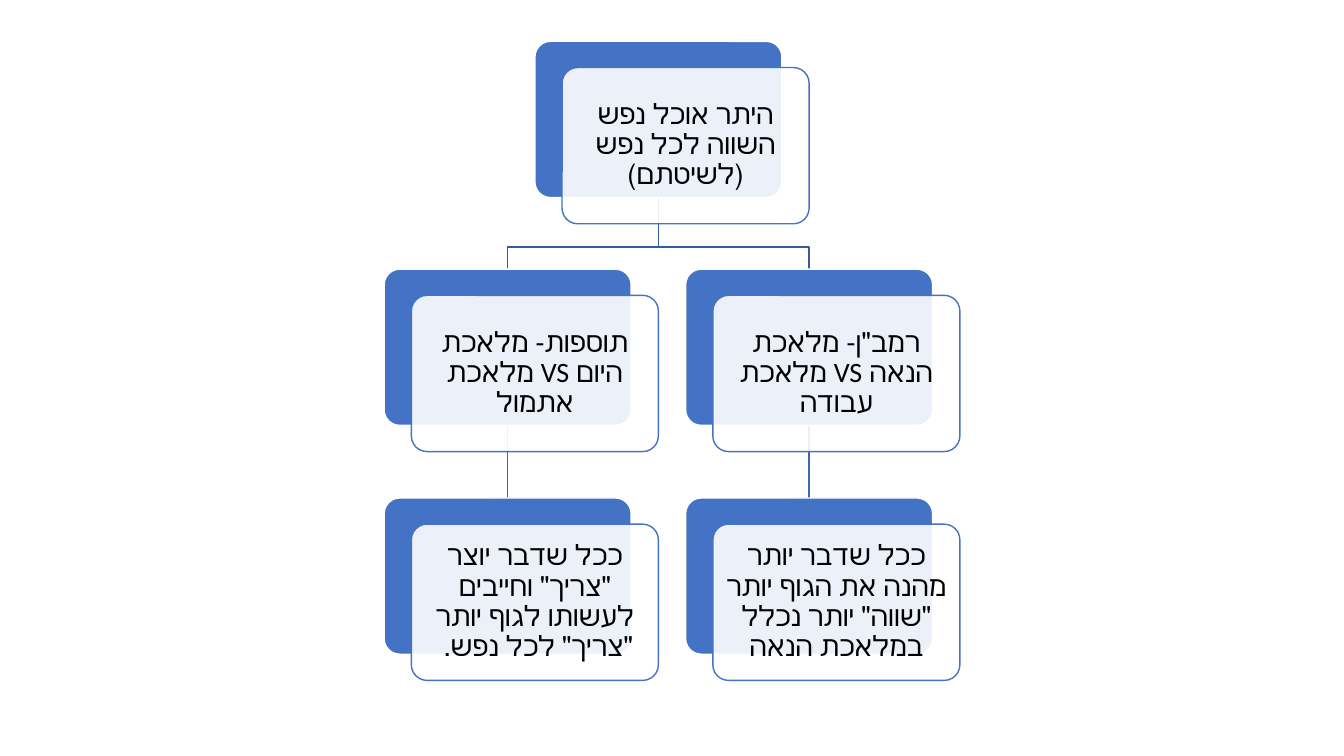
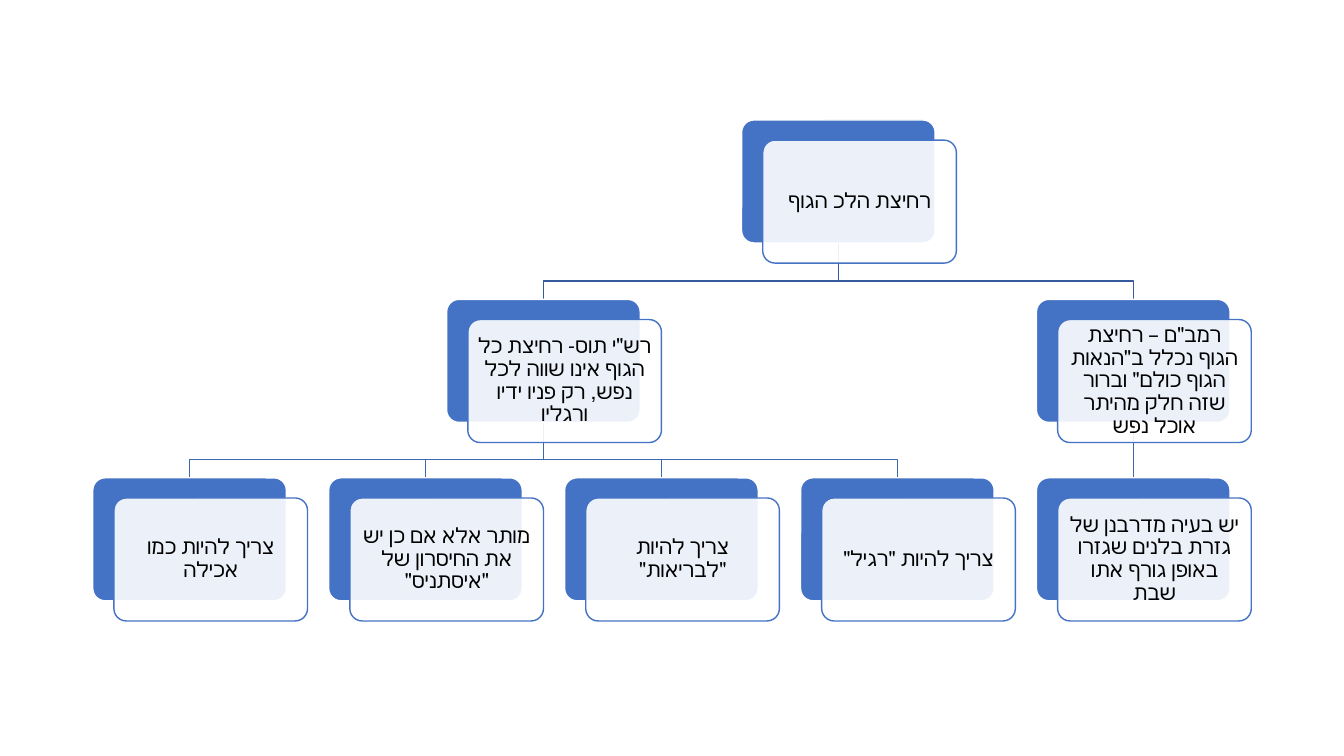
from dataclasses import dataclass

from lxml import etree
from pptx import Presentation
from pptx.dml.color import RGBColor
from pptx.enum.lang import MSO_LANGUAGE_ID
from pptx.enum.shapes import MSO_CONNECTOR, MSO_SHAPE
from pptx.enum.text import MSO_ANCHOR, PP_ALIGN
from pptx.oxml.ns import qn
from pptx.util import Inches, Pt

ROUNDED = MSO_SHAPE.ROUNDED_RECTANGLE
STRAIGHT = MSO_CONNECTOR.STRAIGHT
MIDDLE = MSO_ANCHOR.MIDDLE
CENTER = PP_ALIGN.CENTER
HEBREW = MSO_LANGUAGE_ID.HEBREW


@dataclass(frozen=True)
class Theme:
    font: str = "Calibri"
    blue: RGBColor = RGBColor(0x44, 0x72, 0xC4)
    white: RGBColor = RGBColor(0xFF, 0xFF, 0xFF)
    black: RGBColor = RGBColor(0, 0, 0)
    # Branch colour by the level of the parent
    branches: tuple = (RGBColor(0x36, 0x5B, 0x9D), RGBColor(0x3E, 0x67, 0xB2))
    line: Pt = Pt(1)
    corner: float = 0.1
    card_opacity: int = 90


THEME = Theme()

# Each tree has its measures in inches and its topics as
# (column, level, index of parent, text); columns may be fractional.
TREES = [
    dict(
        left=3.81, column_step=2.99, level_tops=(0.41, 2.67, 4.94),
        width=2.45, height=1.55, shift=(0.27, 0.26), drop=0.22,
        inset=0.08, size=Pt(20),
        topics=[
            (0.5, 0, None, 'היתר אוכל נפש השווה לכל נפש (לשיטתם)'),
            (1, 1, 0, 'רמב"ן- מלאכת הנאה VS מלאכת עבודה'),
            (1, 2, 1, 'ככל שדבר יותר מהנה את הגוף יותר "שווה" יותר נכלל במלאכת הנאה'),
            (0, 1, 0, 'תוספות- מלאכת היום VS מלאכת אתמול'),
            (0, 2, 3, 'ככל שדבר יוצר "צריך" וחייבים לעשותו לגוף יותר "צריך" לכל נפש. '),
        ],
    ),
    dict(
        left=0.92, column_step=2.34, level_tops=(1.19, 2.97, 4.74),
        width=1.92, height=1.22, shift=(0.21, 0.2), drop=0.18,
        inset=0.06, size=Pt(15),
        topics=[
            (2.75, 0, None, 'רחיצת הלכ הגוף'),
            (4, 1, 0, 'רמב"ם – רחיצת הגוף נכלל ב"הנאות הגוף כולם" וברור שזה חלק מהיתר אוכל נפש'),
            (4, 2, 1, 'יש בעיה מדרבנן של גזרת בלנים שגזרו באופן גורף אתו שבת'),
            (1.5, 1, 0, 'רש"י תוס- רחיצת כל הגוף אינו שווה לכל נפש, רק פניו ידיו ורגליו'),
            (3, 2, 3, 'צריך להיות ״רגיל״'),
            (2, 2, 3, 'צריך להיות ״לבריאות״'),
            (1, 2, 3, 'מותר אלא אם כן יש את החיסרון של ״איסתניס״'),
            (0, 2, 3, 'צריך להיות כמו אכילה'),
        ],
    ),
]


def add_panel(slide, x, y, tree, fill, outline):
    """Add one rounded panel of the tree's size."""
    panel = slide.shapes.add_shape(
        ROUNDED, Inches(x), Inches(y), Inches(tree["width"]), Inches(tree["height"]))
    panel.adjustments[0] = THEME.corner
    panel.shadow.inherit = False
    panel.fill.solid()
    panel.fill.fore_color.rgb = fill
    panel.line.color.rgb = outline
    panel.line.width = THEME.line
    return panel


def write_topic(card, text, tree):
    """Write a centred right-to-left topic in a card."""
    frame = card.text_frame
    frame.word_wrap = True
    frame.vertical_anchor = MIDDLE
    frame.margin_left = frame.margin_right = Inches(tree["inset"])
    frame.margin_top = frame.margin_bottom = Inches(tree["inset"])
    paragraph = frame.paragraphs[0]
    paragraph.text = text
    paragraph.alignment = CENTER
    paragraph.line_spacing = 0.9
    paragraph.font.size = tree["size"]
    paragraph.font.color.rgb = THEME.black
    paragraph.font.name = THEME.font
    paragraph.runs[0].font.language_id = HEBREW
    paragraph._p.get_or_add_pPr().set("rtl", "1")


prs = Presentation()
prs.slide_width = Inches(13.33)
prs.slide_height = Inches(7.5)
blank_layout = prs.slide_layouts[6]

for tree in TREES:
    slide = prs.slides.add_slide(blank_layout)
    topics = tree["topics"]
    corners = [(tree["left"] + column * tree["column_step"], tree["level_tops"][level])
               for column, level, _, _ in topics]

    # Branches, behind the cards
    for (x, y), (_, _, parent, _) in zip(corners, topics):
        if parent is None:
            continue
        parent_x, parent_y = corners[parent]
        start_x = Inches(parent_x + tree["width"] / 2)
        start_y = Inches(parent_y + tree["height"])
        end_x, end_y = Inches(x + tree["width"] / 2), Inches(y)
        if start_x == end_x:
            branch = slide.shapes.add_connector(STRAIGHT, start_x, start_y, end_x, end_y)
            etree.SubElement(branch._element.spPr, qn("a:effectLst"))
        else:
            bend_y = Inches(y - tree["drop"])
            outline = slide.shapes.build_freeform(start_x, start_y)
            outline.add_line_segments(
                [(start_x, bend_y), (end_x, bend_y), (end_x, end_y)], close=False)
            branch = outline.convert_to_shape()
            branch.fill.background()
            branch.shadow.inherit = False
        branch.line.color.rgb = THEME.branches[topics[parent][1]]
        branch.line.width = THEME.line

    # Blue panels with translucent topic cards in front
    shift_x, shift_y = tree["shift"]
    for (x, y), (_, _, _, text) in zip(corners, topics):
        add_panel(slide, x, y, tree, THEME.blue, THEME.white)
        card = add_panel(slide, x + shift_x, y + shift_y, tree, THEME.white, THEME.blue)
        fill_color = card._element.spPr.find(qn("a:solidFill"))[0]
        etree.SubElement(fill_color, qn("a:alpha"), val=str(THEME.card_opacity * 1000))
        write_topic(card, text, tree)

prs.save("out.pptx")
